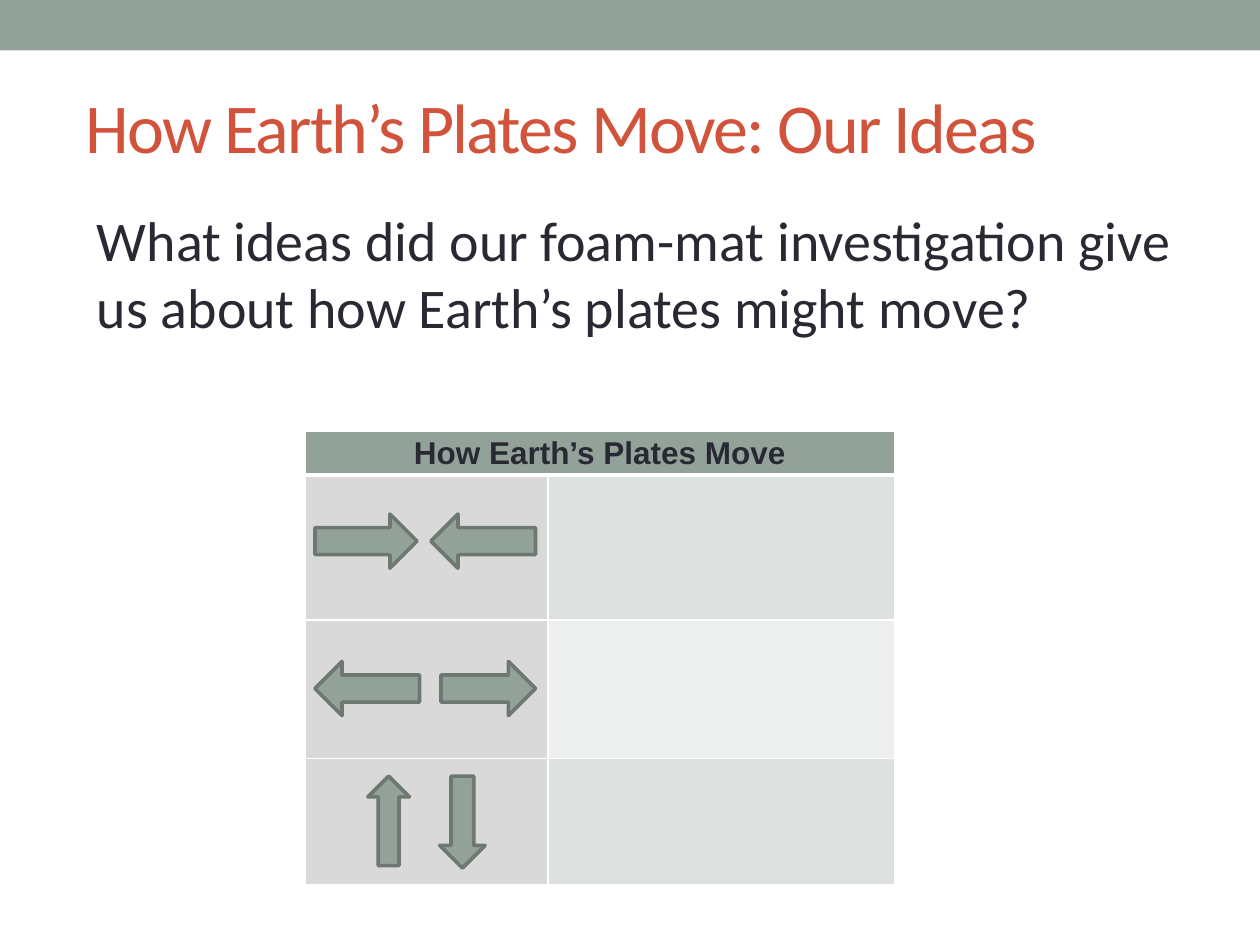
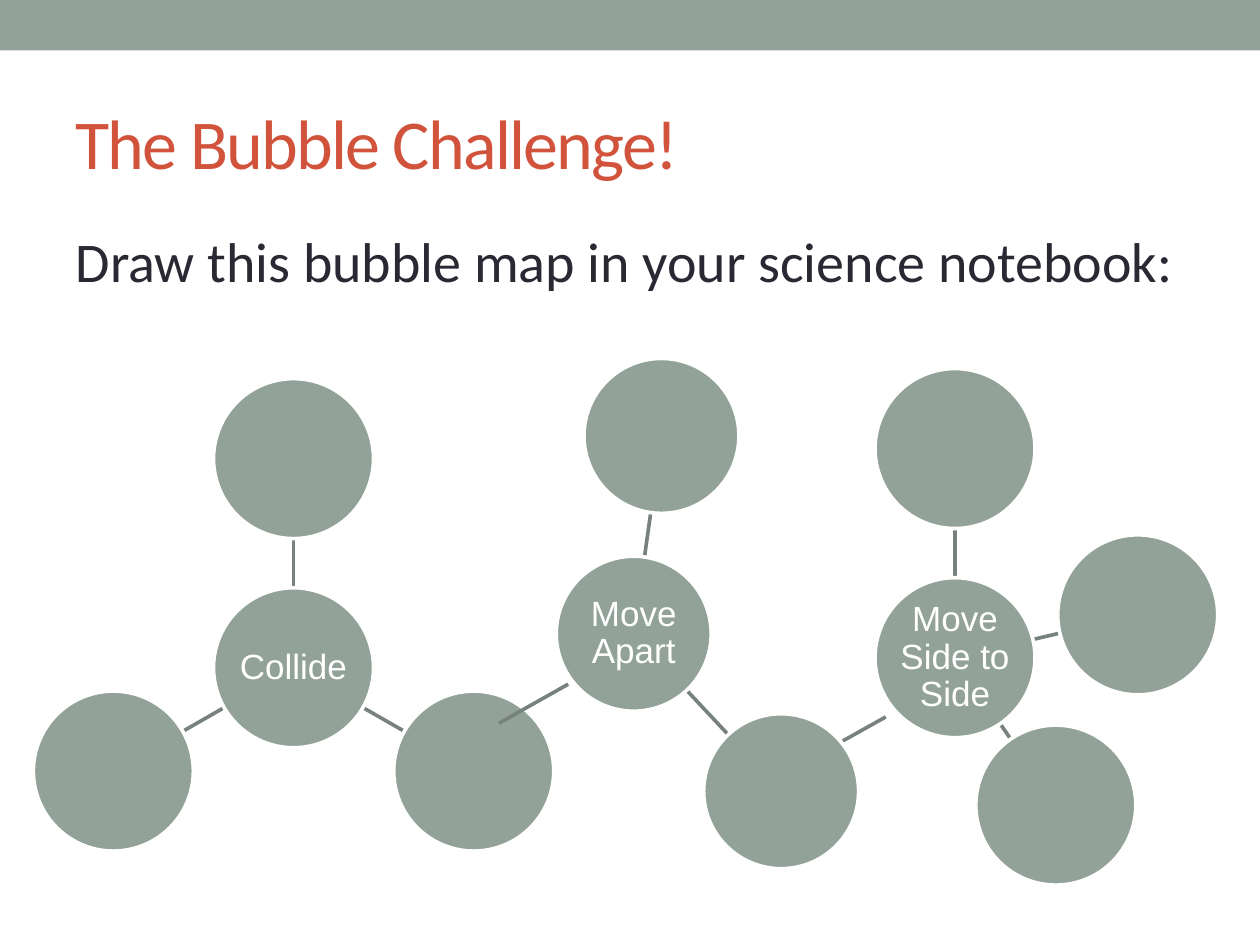
"""Build two lesson slides on how Earth's plates move."""
import math

import lxml.etree
import pptx
import pptx.dml.color
import pptx.enum.shapes
import pptx.enum.text
import pptx.oxml.ns
import pptx.util

Inches = pptx.util.Inches
Pt = pptx.util.Pt
SHAPE = pptx.enum.shapes.MSO_SHAPE
ALIGN = pptx.enum.text.PP_ALIGN
ANCHOR = pptx.enum.text.MSO_ANCHOR
qn = pptx.oxml.ns.qn

COLORS = {
    "sage": "93A299",
    "title": "D2533C",
    "text": "292934",
    "white": "FFFFFF",
    "arrow_edge": "6D7871",
    "spoke": "76827B",
    "label_cell": "D9D9D9",
    "dark_cell": "DCE0DE",
    "light_cell": "EEF0EF",
}
TITLE_ONLY, TITLE_AND_BODY = 5, 1
LINE_WIDTH = 2.08

COLUMN_WIDTHS = (1.93, 2.75)
ROW_HEIGHTS = (0.35, 1.15, 1.1, 1)
ANSWER_FILLS = ("dark_cell", "light_cell", "dark_cell")
PLATE_ARROWS = (
    (SHAPE.RIGHT_ARROW, 2.5, 4.08, 0.81, 0.43),
    (SHAPE.LEFT_ARROW, 3.42, 4.08, 0.83, 0.43),
    (SHAPE.LEFT_ARROW, 2.5, 5.25, 0.83, 0.43),
    (SHAPE.RIGHT_ARROW, 3.5, 5.25, 0.75, 0.43),
    (SHAPE.UP_ARROW, 2.92, 6.16, 0.33, 0.71),
    (SHAPE.DOWN_ARROW, 3.49, 6.16, 0.36, 0.73),
)
BUBBLE_CLUSTERS = (
    ("Collide", 1.27, (2.33, 5.3), ((2.33, 3.64), (3.76, 6.12), (0.9, 6.12))),
    ("Move Apart", 1.23, (5.03, 5.03), ((5.25, 3.46), (6.2, 6.28))),
    ("Move Side to Side", 1.27, (7.58, 5.22), ((7.58, 3.56), (9.03, 4.88), (8.38, 6.39))),
)
CLUSTER_BRIDGES = (((4.51, 5.43), (3.96, 5.74)), ((7.03, 5.69), (6.69, 5.88)))


def rgb(name):
    return pptx.dml.color.RGBColor.from_string(COLORS[name])


def place(shape, left, top, width, height):
    shape.left, shape.top = Inches(left), Inches(top)
    shape.width, shape.height = Inches(width), Inches(height)


def write(frame, text, size, color, font="Calibri", align=ALIGN.LEFT):
    frame.word_wrap = True
    frame.text = text
    para = frame.paragraphs[0]
    para.alignment = align
    para.font.name = font
    para.font.size = Pt(size)
    para.font.color.rgb = rgb(color)
    return para


def add_filled_shape(page, kind, box, edge=None):
    shape = page.shapes.add_shape(kind, *map(Inches, box))
    shape.shadow.inherit = False
    shape.fill.solid()
    shape.fill.fore_color.rgb = rgb("sage")
    if edge:
        shape.line.color.rgb = rgb(edge)
        shape.line.width = Pt(LINE_WIDTH)
    else:
        shape.line.fill.background()
    return shape


def add_page(deck, layout, title, title_box):
    page = deck.slides.add_slide(deck.slide_layouts[layout])
    add_filled_shape(page, SHAPE.RECTANGLE, (0, 0, 10, 0.4))
    place(page.shapes.title, *title_box)
    frame = page.shapes.title.text_frame
    para = write(frame, title, 40, "title")
    frame.vertical_anchor = ANCHOR.MIDDLE
    frame.auto_size = pptx.enum.text.MSO_AUTO_SIZE.NONE
    para.runs[0].font._element.set("spc", "-100")
    return page


def format_cell(cell, fill, bottom_width=1):
    properties = cell._tc.get_or_add_tcPr()
    for side in "LRTB":
        width = bottom_width if side == "B" else 1
        border = lxml.etree.SubElement(properties, qn(f"a:ln{side}"), w=str(Pt(width)))
        solid = lxml.etree.SubElement(border, qn("a:solidFill"))
        lxml.etree.SubElement(solid, qn("a:srgbClr"), val=COLORS["white"])
    cell.fill.solid()
    cell.fill.fore_color.rgb = rgb(fill)


def add_plate_table(page):
    frame = page.shapes.add_table(
        len(ROW_HEIGHTS), len(COLUMN_WIDTHS), Inches(2.42), Inches(3.42),
        Inches(sum(COLUMN_WIDTHS)), Inches(sum(ROW_HEIGHTS)))
    table = frame.table
    for column, width in zip(table.columns, COLUMN_WIDTHS):
        column.width = Inches(width)
    for row, height in zip(table.rows, ROW_HEIGHTS):
        row.height = Inches(height)
    header = table.cell(0, 0)
    header.merge(table.cell(0, 1))
    for cell in table.rows[0].cells:
        format_cell(cell, "sage", bottom_width=3)
    header.margin_left = header.margin_right = Inches(0.07)
    header.margin_top = header.margin_bottom = 0
    para = write(header.text_frame, "How Earth’s Plates Move", 18, "text", "Arial", ALIGN.CENTER)
    para.font.bold = True
    para.line_spacing = 1.15
    for row, answer_fill in enumerate(ANSWER_FILLS, start=1):
        format_cell(table.cell(row, 0), "label_cell")
        format_cell(table.cell(row, 1), answer_fill)


def add_line(page, start, end):
    line = page.shapes.add_connector(
        pptx.enum.shapes.MSO_CONNECTOR.STRAIGHT, *map(Inches, (*start, *end)))
    line.line.color.rgb = rgb("spoke")
    line.line.width = Pt(LINE_WIDTH)
    lxml.etree.SubElement(line._element.spPr, qn("a:effectLst"))


def add_spoke(page, hub, satellite, radius):
    """Join two bubbles from edge to edge along the line of their centres."""
    share = radius / math.dist(hub, satellite)
    start = [a + (b - a) * share for a, b in zip(hub, satellite)]
    end = [b - (b - a) * share for a, b in zip(hub, satellite)]
    add_line(page, start, end)


def add_bubble(page, center, diameter, label=None):
    left, top = (value - diameter / 2 for value in center)
    bubble = add_filled_shape(page, SHAPE.OVAL, (left, top, diameter, diameter), "white")
    if label:
        frame = bubble.text_frame
        frame.margin_left = frame.margin_right = frame.margin_top = frame.margin_bottom = 0
        frame.vertical_anchor = ANCHOR.MIDDLE
        write(frame, label, 20, "white", "Arial", ALIGN.CENTER).line_spacing = 0.9


def add_cluster(page, label, diameter, hub, satellites):
    for satellite in satellites:
        add_spoke(page, hub, satellite, diameter / 2)
    add_bubble(page, hub, diameter, label)
    for satellite in satellites:
        add_bubble(page, satellite, diameter)


def build_ideas_page(deck):
    page = add_page(deck, TITLE_ONLY, "How Earth’s Plates Move: Our Ideas", (0.58, 0.58, 8.83, 0.83))
    add_plate_table(page)
    for kind, *box in PLATE_ARROWS:
        add_filled_shape(page, kind, box, "arrow_edge")
    question = page.shapes.add_textbox(*map(Inches, (0.67, 1.58, 8.92, 1.18)))
    write(question.text_frame,
          "What ideas did our foam-mat investigation give us about how Earth’s plates might move?",
          32, "text")


def build_bubble_page(deck):
    page = add_page(deck, TITLE_AND_BODY, "The Bubble Challenge!", (0.5, 0.58, 9, 1.08))
    body = page.placeholders[1]
    place(body, 0.5, 1.75, 9, 0.92)
    para = write(body.text_frame, "Draw this bubble map in your science notebook:", 32, "text")
    properties = para._p.get_or_add_pPr()
    properties.set("marL", "0")
    properties.set("indent", "0")
    properties.insert_element_before(
        pptx.oxml.parse_xml(f"<a:buNone {pptx.oxml.ns.nsdecls('a')}/>"), "a:tabLst", "a:defRPr", "a:extLst")
    for cluster in BUBBLE_CLUSTERS:
        add_cluster(page, *cluster)
    for start, end in CLUSTER_BRIDGES:
        add_line(page, start, end)


def main():
    deck = pptx.Presentation()
    deck.slide_width, deck.slide_height = Inches(10), Inches(7.5)
    build_ideas_page(deck)
    build_bubble_page(deck)
    deck.save("out.pptx")


if __name__ == "__main__":
    main()
